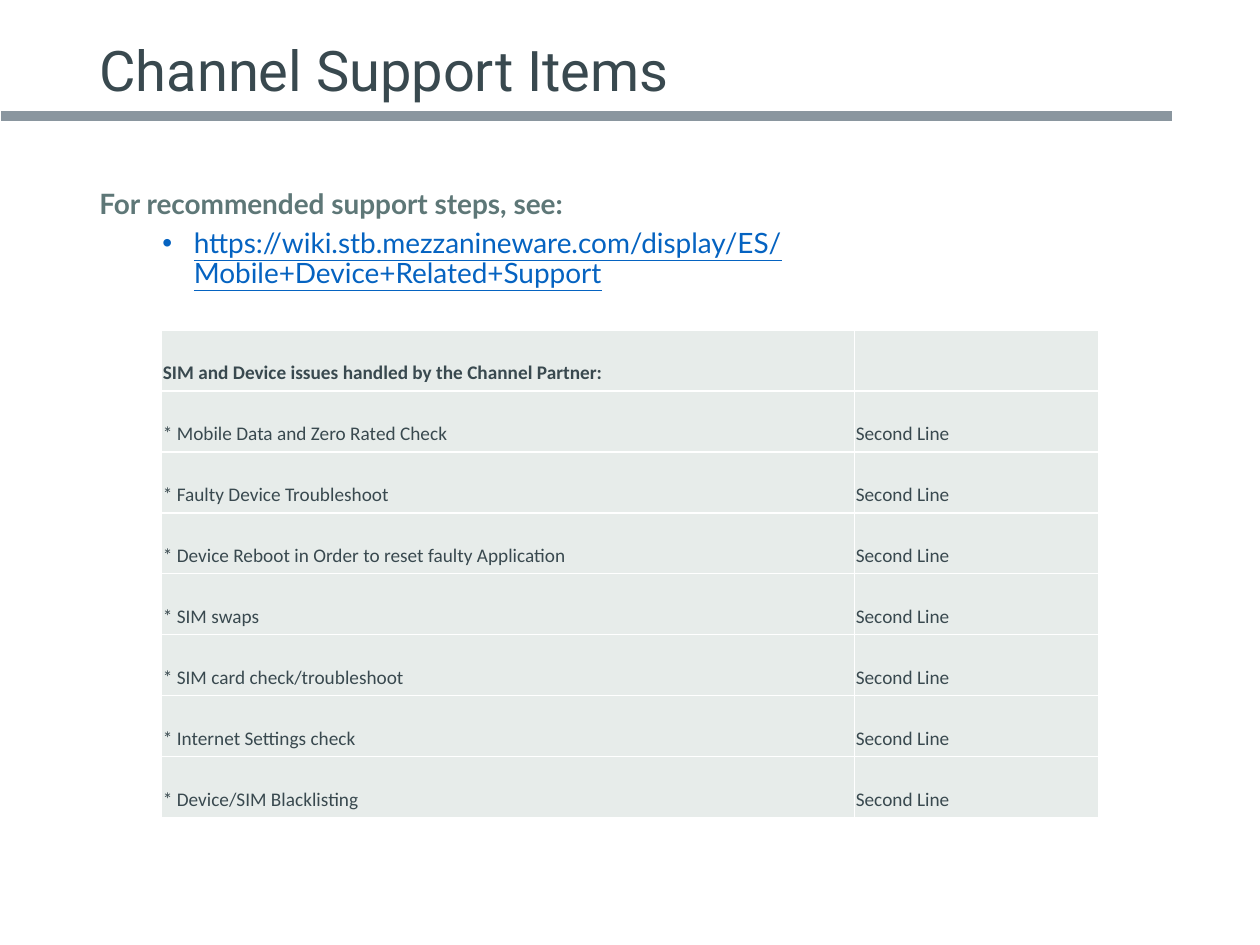
from dataclasses import dataclass

from lxml.etree import SubElement
from pptx import Presentation
from pptx.dml.color import RGBColor
from pptx.enum.shapes import MSO_SHAPE
from pptx.enum.text import MSO_ANCHOR
from pptx.oxml.ns import qn
from pptx.util import Pt


@dataclass(frozen=True)
class Theme:
    ink: str = "39494F"
    accent: str = "5E7777"
    link: str = "0563C1"
    bar: str = "8A969F"
    cell: str = "E7ECEA"
    white: str = "FFFFFF"
    title_font: str = "Roboto"
    body_font: str = "Lato"
    table_font: str = "Calibri"
    title_size: int = 32
    body_size: int = 16
    table_size: int = 11


THEME = Theme()
LEFT, WIDTH = 49.7, 620.6
ISSUES = [
    "Mobile Data and Zero Rated Check",
    "Faulty Device Troubleshoot",
    "Device Reboot in Order to reset faulty Application",
    "SIM swaps",
    "SIM card check/troubleshoot",
    "Internet Settings check",
    "Device/SIM Blacklisting",
]


def rgb(value):
    return RGBColor.from_string(value)


def add_run(p, text, font, size, color, bold=False, underline=False):
    r = p.add_run()
    r.text = text
    r.font.name = font
    r.font.size = Pt(size)
    r.font.color.rgb = rgb(color)
    r.font.bold = bold
    r.font.underline = underline


def add_bar(s, x, y, w, h):
    sp = s.shapes.add_shape(MSO_SHAPE.RECTANGLE, Pt(x), Pt(y), Pt(w), Pt(h))
    sp.shadow.inherit = False
    sp.fill.solid()
    sp.fill.fore_color.rgb = rgb(THEME.bar)
    sp.line.color.rgb = rgb(THEME.white)
    sp.line.width = Pt(1)


def add_text_box(s, x, y, w, h, anchor):
    tf = s.shapes.add_textbox(Pt(x), Pt(y), Pt(w), Pt(h)).text_frame
    tf.word_wrap = True
    tf.vertical_anchor = anchor
    tf.paragraphs[0].line_spacing = 0.9
    return tf


def add_bullet(tf, left, hanging):
    p = tf.add_paragraph()
    p.level = 1
    p.line_spacing = 0.9
    p.space_before = Pt(5)
    pPr = p._p.get_or_add_pPr()
    pPr.set("marL", str(Pt(left)))
    pPr.set("indent", str(-Pt(hanging)))
    SubElement(pPr, qn("a:buFont"), typeface="Arial")
    SubElement(pPr, qn("a:buChar"), char="•")
    return p


def style_cell(cell):
    tcPr = cell._tc.get_or_add_tcPr()
    for side in ("lnL", "lnR", "lnT", "lnB"):
        ln = SubElement(tcPr, qn(f"a:{side}"), w=str(Pt(1)))
        fill = SubElement(ln, qn("a:solidFill"))
        SubElement(fill, qn("a:srgbClr"), val=THEME.white)
    cell.fill.solid()
    cell.fill.fore_color.rgb = rgb(THEME.cell)
    cell.vertical_anchor = MSO_ANCHOR.BOTTOM
    cell.margin_left = cell.margin_right = cell.margin_top = Pt(0.75)
    cell.margin_bottom = Pt(3.6)


def add_table(s, x, y, widths, row_height, rows):
    table = s.shapes.add_table(
        len(rows), len(widths), Pt(x), Pt(y),
        Pt(sum(widths)), Pt(row_height * len(rows)),
    ).table
    for col, width in zip(table.columns, widths):
        col.width = Pt(width)
    for i, row in enumerate(rows):
        table.rows[i].height = Pt(row_height)
        for j, text in enumerate(row):
            cell = table.cell(i, j)
            style_cell(cell)
            if text:
                add_run(cell.text_frame.paragraphs[0], text, THEME.table_font,
                        THEME.table_size, THEME.ink, bold=i == 0)


def main():
    prs = Presentation()
    prs.slide_width, prs.slide_height = Pt(720), Pt(540)
    s = prs.slides.add_slide(prs.slide_layouts[6])

    add_bar(s, 0, 63, 670.3, 6.5)

    body = add_text_box(s, LEFT, 105.1, WIDTH, 393.8, MSO_ANCHOR.TOP)
    add_run(body.paragraphs[0], "For recommended support steps, see:",
            THEME.body_font, THEME.body_size, THEME.accent, bold=True)
    add_run(add_bullet(body, 54, 18),
            "https://wiki.stb.mezzanineware.com/display/ES/Mobile+Device+Related+Support",
            THEME.body_font, THEME.body_size, THEME.link, underline=True)

    title = add_text_box(s, LEFT, 2.2, WIDTH, 79.9, MSO_ANCHOR.MIDDLE)
    add_run(title.paragraphs[0], "Channel Support Items",
            THEME.title_font, THEME.title_size, THEME.ink)

    rows = [("SIM and Device issues handled by the Channel Partner:", "")]
    rows += [(f"* {issue}", "Second Line") for issue in ISSUES]
    add_table(s, 92.3, 188.5, (396, 139.5), 34.85, rows)

    prs.save("out.pptx")


if __name__ == "__main__":
    main()
